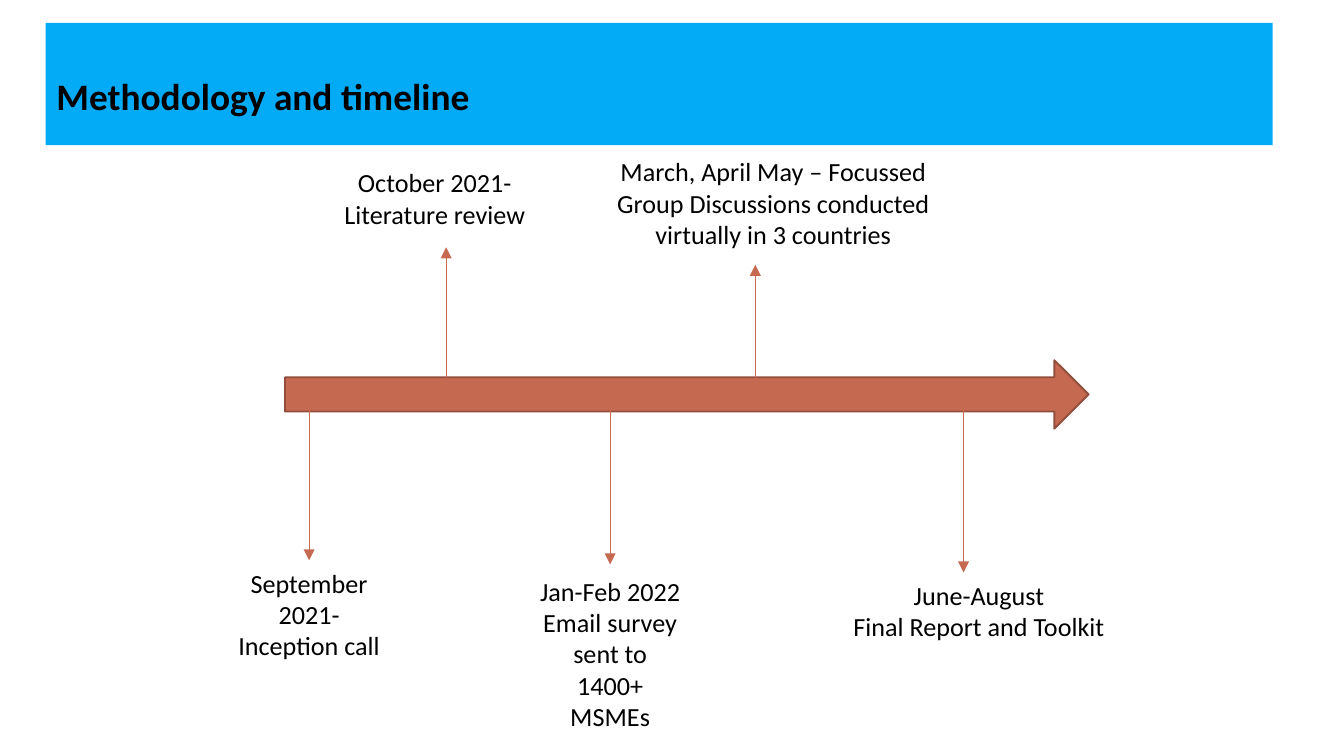
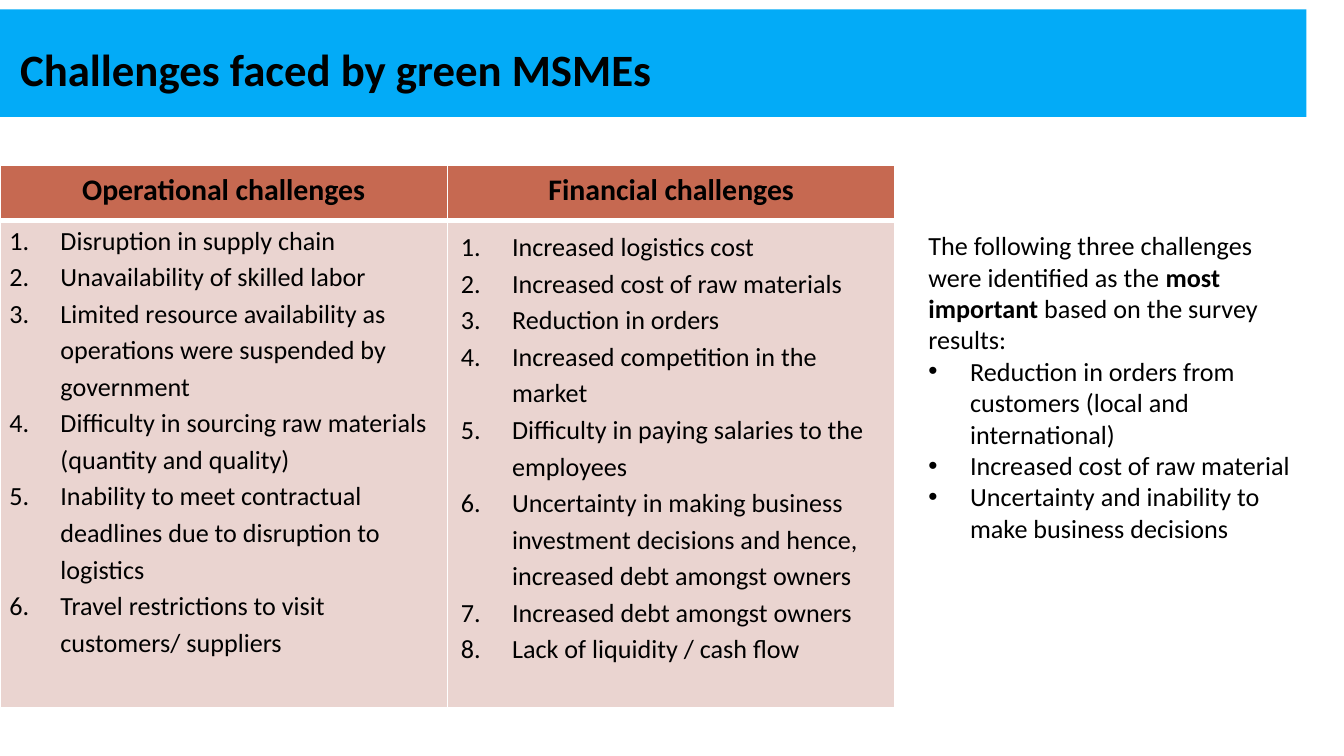
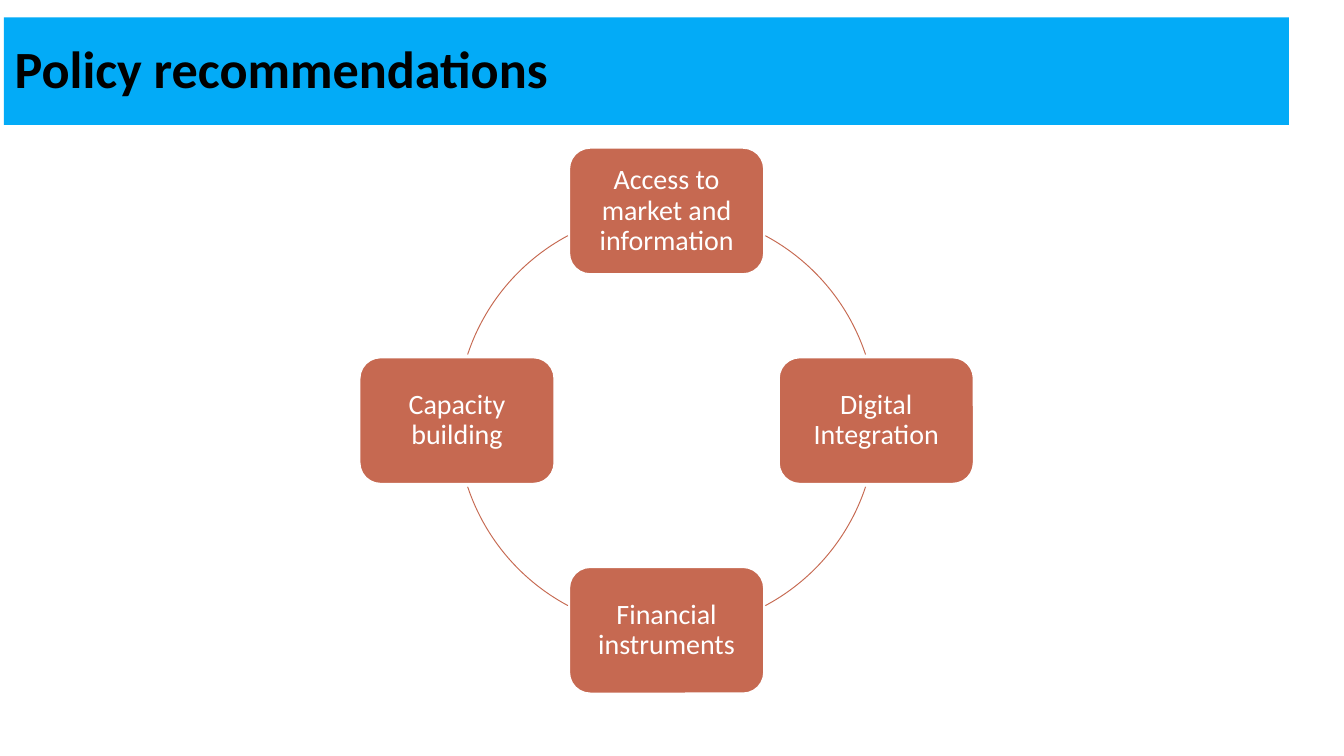
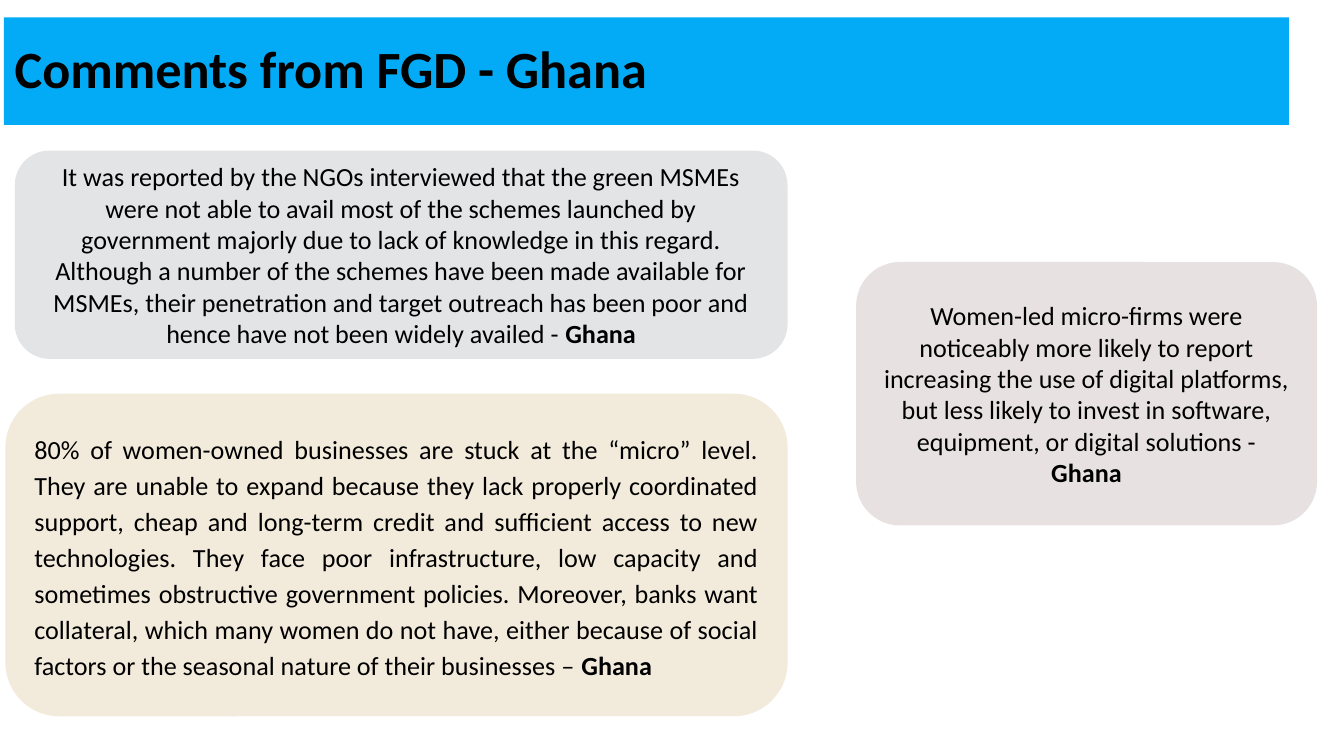
from math import cos, radians, sin

from lxml.etree import SubElement
from pptx import Presentation
from pptx.dml.color import RGBColor
from pptx.enum.shapes import MSO_CONNECTOR, MSO_SHAPE
from pptx.enum.text import MSO_ANCHOR, MSO_AUTO_SIZE, PP_ALIGN
from pptx.oxml.ns import qn
from pptx.util import Inches, Pt

# Shared style
FONT, BODY = "Calibri", 14
BLACK, WHITE, BLUE = "000000", "FFFFFF", "03ABF7"
RUST, RUST_EDGE, PINK = "C66951", "924E3C", "EAD4D0"
LEFT, CENTER, JUSTIFY = PP_ALIGN.LEFT, PP_ALIGN.CENTER, PP_ALIGN.JUSTIFY
TOP, MIDDLE = MSO_ANCHOR.TOP, MSO_ANCHOR.MIDDLE
INSETS = (0.1, 0.05, 0.1, 0.05)

# Slide titles: text, band, size, line spacing, anchor, left inset
TITLES = [
    ("Methodology and timeline", (0.34, 0.17, 9.13, 0.91), 20, 2, TOP, 0.08),
    ("Challenges faced by green MSMEs", (0, 0.07, 9.72, 0.8), 24, 1.5, TOP, 0.15),
    ("Policy recommendations", (0.03, 0.13, 9.56, 0.8), 28, 0.9, MIDDLE, 0.08),
    ("Comments from FGD - Ghana", (0.03, 0.13, 9.56, 0.8), 28, 0.9, MIDDLE, 0.08),
]

# Timeline: arrow x, start y, end y, label box, label paragraphs
TIME_ARROW = (2.12, 2.68, 5.98, 0.51)
MILESTONES = [
    (2.3, 2.92, 4.17, (1.66, 4.17, 1.28, 0.81), ["September 2021- Inception call"]),
    (3.32, 2.81, 1.84, (2.41, 1.19, 1.65, 0.57), ["October 2021- Literature review"]),
    (4.54, 2.95, 4.2, (3.9, 4.23, 1.28, 1.28),
     ["Jan-Feb 2022", "Email survey sent to 1400+ MSMEs"]),
    (5.62, 2.95, 1.97, (4.39, 1.11, 2.73, 0.81),
     ["March, April May – Focussed Group Discussions conducted virtually in 3 countries"]),
    (7.17, 3.01, 4.26, (5.92, 4.26, 2.73, 0.57),
     ["June-August", "Final Report and Toolkit"]),
]

# Challenges: heading, cell insets, numbered items
CHALLENGES_AT, ROW_HEIGHTS = (0, 1.23, 6.66, 4.04), (0.41, 3.63)
CHALLENGES = [
    ("Operational challenges", (0.07, 0, 0.07, 0), [
        "Disruption in supply chain",
        "Unavailability of skilled labor",
        "Limited resource availability as operations were suspended by government",
        "Difficulty in sourcing raw materials (quantity and quality)",
        "Inability to meet contractual deadlines due to disruption to logistics",
        "Travel restrictions to visit customers/ suppliers",
    ]),
    ("Financial challenges", INSETS, [
        "Increased logistics cost",
        "Increased cost of raw materials",
        "Reduction in orders",
        "Increased competition in the market",
        "Difficulty in paying salaries to the employees",
        "Uncertainty in making business investment decisions and hence, "
        "increased debt amongst owners",
        "Increased debt amongst owners",
        "Lack of liquidity / cash flow",
    ]),
]
FINDINGS_AT = (6.81, 1.66, 2.97, 2.69)
FINDINGS_INTRO = ("The following three challenges were identified as the "
                  "**most important **based on the survey results:")
FINDINGS = [
    "Reduction in orders from customers (local and international)",
    "Increased cost of raw material",
    "Uncertainty and inability to make business decisions",
]

# Policy cycle, clockwise from the top
POLICIES = ["Access to market and information", "Digital Integration",
            "Financial instruments", "Capacity building"]
CYCLE_X, CYCLE_Y, CYCLE_R = 4.96, 3.13, 1.56
POLICY_W, POLICY_H = 1.45, 0.94
ARC_FROM, ARC_TO = 18.4, 61.9

# Comments: box, fill, alignment, line spacing, text
COMMENTS = [
    ((0.04, 2.93, 5.82, 2.4), "F2EADB", JUSTIFY, 1.15,
     "80% of women-owned businesses are stuck at the “micro” level. They are unable to "
     "expand because they lack properly coordinated support, cheap and long-term credit "
     "and sufficient access to new technologies. They face poor infrastructure, low "
     "capacity and sometimes obstructive government policies. Moreover, banks want "
     "collateral, which many women do not have, either because of social factors or the "
     "seasonal nature of their businesses – **Ghana**"),
    ((0.11, 1.12, 5.75, 1.55), "E2E4E5", CENTER, 1,
     "It was reported by the NGOs interviewed that the green MSMEs were not able to avail "
     "most of the schemes launched by government majorly due to lack of knowledge in this "
     "regard. Although a number of the schemes have been made available for MSMEs, their "
     "penetration and target outreach has been poor and hence have not been widely "
     "availed - **Ghana**"),
    ((6.37, 1.95, 3.43, 1.96), "E7E2E1", CENTER, 1,
     "Women-led micro-firms were noticeably more likely to report increasing the use of "
     "digital platforms, but less likely to invest in software, equipment, or digital "
     "solutions - **Ghana**"),
]


# Helpers
def rgb(color):
    return RGBColor.from_string(color)


def box(at):
    return [Inches(v) for v in at]


def set_insets(holder, insets):
    (holder.margin_left, holder.margin_top,
     holder.margin_right, holder.margin_bottom) = box(insets)


def add_bullet(p, indent, tag, **attrs):
    pPr = p._p.get_or_add_pPr()
    pPr.set("marL", str(Inches(indent)))
    pPr.set("indent", str(-Inches(indent)))
    SubElement(pPr, qn("a:buFont"), typeface="Arial" if tag == "a:buChar" else FONT)
    SubElement(pPr, qn(tag), **attrs)


def write(p, text, size=BODY, color=BLACK, bold=False, align=LEFT, spacing=1):
    """Fill a paragraph; parts between ** are bold."""
    p.alignment, p.line_spacing = align, spacing
    for i, part in enumerate(text.split("**")):
        if part:
            r = p.add_run()
            r.text = part
            r.font.name, r.font.size = FONT, Pt(size)
            r.font.bold = bold or i % 2 == 1
            r.font.color.rgb = rgb(color)


def paragraphs(tf, count):
    return [tf.paragraphs[0]] + [tf.add_paragraph() for _ in range(count - 1)]


def add_shape(s, kind, at, fill=None, line=None, width=1):
    sp = s.shapes.add_shape(kind, *box(at))
    sp.shadow.inherit = False
    if fill:
        sp.fill.solid()
        sp.fill.fore_color.rgb = rgb(fill)
    else:
        sp.fill.background()
    if line:
        sp.line.color.rgb, sp.line.width = rgb(line), Pt(width)
    else:
        sp.line.fill.background()
    return sp


def shape_text(sp, text, insets=INSETS, anchor=MIDDLE, **style):
    tf = sp.text_frame
    tf.word_wrap, tf.vertical_anchor = True, anchor
    set_insets(tf, insets)
    write(tf.paragraphs[0], text, **style)


def add_textbox(s, at):
    tf = s.shapes.add_textbox(*box(at)).text_frame
    tf.word_wrap, tf.auto_size = True, MSO_AUTO_SIZE.SHAPE_TO_FIT_TEXT
    return tf


def add_arrow(s, x, y1, y2):
    c = s.shapes.add_connector(MSO_CONNECTOR.STRAIGHT, *box((x, y1, x, y2)))
    c.line.color.rgb, c.line.width = rgb(RUST), Pt(0.5)
    SubElement(c.line._ln, qn("a:tailEnd"), type="triangle")
    SubElement(c._element.spPr, qn("a:effectLst"))


def style_cell(cell, fill, top, bottom):
    tcPr = cell._tc.get_or_add_tcPr()
    for side, width in (("L", 1), ("R", 1), ("T", top), ("B", bottom)):
        ln = SubElement(tcPr, qn("a:ln" + side), w=str(Pt(width)))
        SubElement(SubElement(ln, qn("a:solidFill")), qn("a:srgbClr"), val=WHITE)
    cell.fill.solid()
    cell.fill.fore_color.rgb = rgb(fill)


def titled_slide(prs, title):
    text, at, size, spacing, anchor, left = title
    s = prs.slides.add_slide(prs.slide_layouts[6])
    sp = add_shape(s, MSO_SHAPE.RECTANGLE, at, BLUE)
    shape_text(sp, text, (left, 0.04, 0.07, 0.04), anchor,
               size=size, bold=True, spacing=spacing)
    return s


# Slide parts
def draw_timeline(s):
    add_shape(s, MSO_SHAPE.RIGHT_ARROW, TIME_ARROW, RUST, RUST_EDGE)
    for x, y1, y2, at, lines in MILESTONES:
        add_arrow(s, x, y1, y2)
        for p, text in zip(paragraphs(add_textbox(s, at), len(lines)), lines):
            write(p, text, align=CENTER)


def draw_challenges(s):
    table = s.shapes.add_table(2, len(CHALLENGES), *box(CHALLENGES_AT)).table
    for row, height in zip(table.rows, ROW_HEIGHTS):
        row.height = Inches(height)
    for col, (heading, insets, items) in enumerate(CHALLENGES):
        head, body = table.cell(0, col), table.cell(1, col)
        style_cell(head, RUST, 1, 3)
        write(head.text_frame.paragraphs[0], heading, 16, bold=True, align=CENTER)
        style_cell(body, PINK, 3, 1)
        set_insets(body, insets)
        for p, item in zip(paragraphs(body.text_frame, len(items)), items):
            add_bullet(p, 0.38, "a:buAutoNum", type="arabicPeriod")
            write(p, item, spacing=1.15)
    intro, *rest = paragraphs(add_textbox(s, FINDINGS_AT), len(FINDINGS) + 1)
    write(intro, FINDINGS_INTRO)
    for p, text in zip(rest, FINDINGS):
        add_bullet(p, 0.31, "a:buChar", char="•")
        write(p, text)


def draw_cycle(s):
    ring = (CYCLE_X - CYCLE_R, CYCLE_Y - CYCLE_R, 2 * CYCLE_R, 2 * CYCLE_R)
    for i, policy in enumerate(POLICIES):
        turn = 90 * i - 90
        x = CYCLE_X + CYCLE_R * cos(radians(turn)) - POLICY_W / 2
        y = CYCLE_Y + CYCLE_R * sin(radians(turn)) - POLICY_H / 2
        sp = add_shape(s, MSO_SHAPE.ROUNDED_RECTANGLE,
                       (x, y, POLICY_W, POLICY_H), RUST, WHITE)
        shape_text(sp, policy, (0.06,) * 4, size=15, color=WHITE,
                   align=CENTER, spacing=0.9)
        # Arc angles are stored in 60000ths of a degree, scaled by 100000
        arc = add_shape(s, MSO_SHAPE.ARC, ring, line=RUST, width=0.5)
        ends = (ARC_FROM, ARC_TO) if i % 2 else (90 - ARC_TO, 90 - ARC_FROM)
        for j, angle in enumerate(ends):
            arc.adjustments[j] = (turn + angle) % 360 * 0.6


def draw_comments(s):
    for at, fill, align, spacing, text in COMMENTS:
        sp = add_shape(s, MSO_SHAPE.ROUNDED_RECTANGLE, at, fill)
        shape_text(sp, text, align=align, spacing=spacing)
        if spacing > 1:
            sp.text_frame.paragraphs[0].space_after = Pt(6)


def main():
    prs = Presentation()
    prs.slide_width = Inches(10)
    prs.slide_height = prs.slide_width * 9 // 16
    parts = (draw_timeline, draw_challenges, draw_cycle, draw_comments)
    for title, draw in zip(TITLES, parts):
        draw(titled_slide(prs, title))
    prs.save("out.pptx")


if __name__ == "__main__":
    main()
